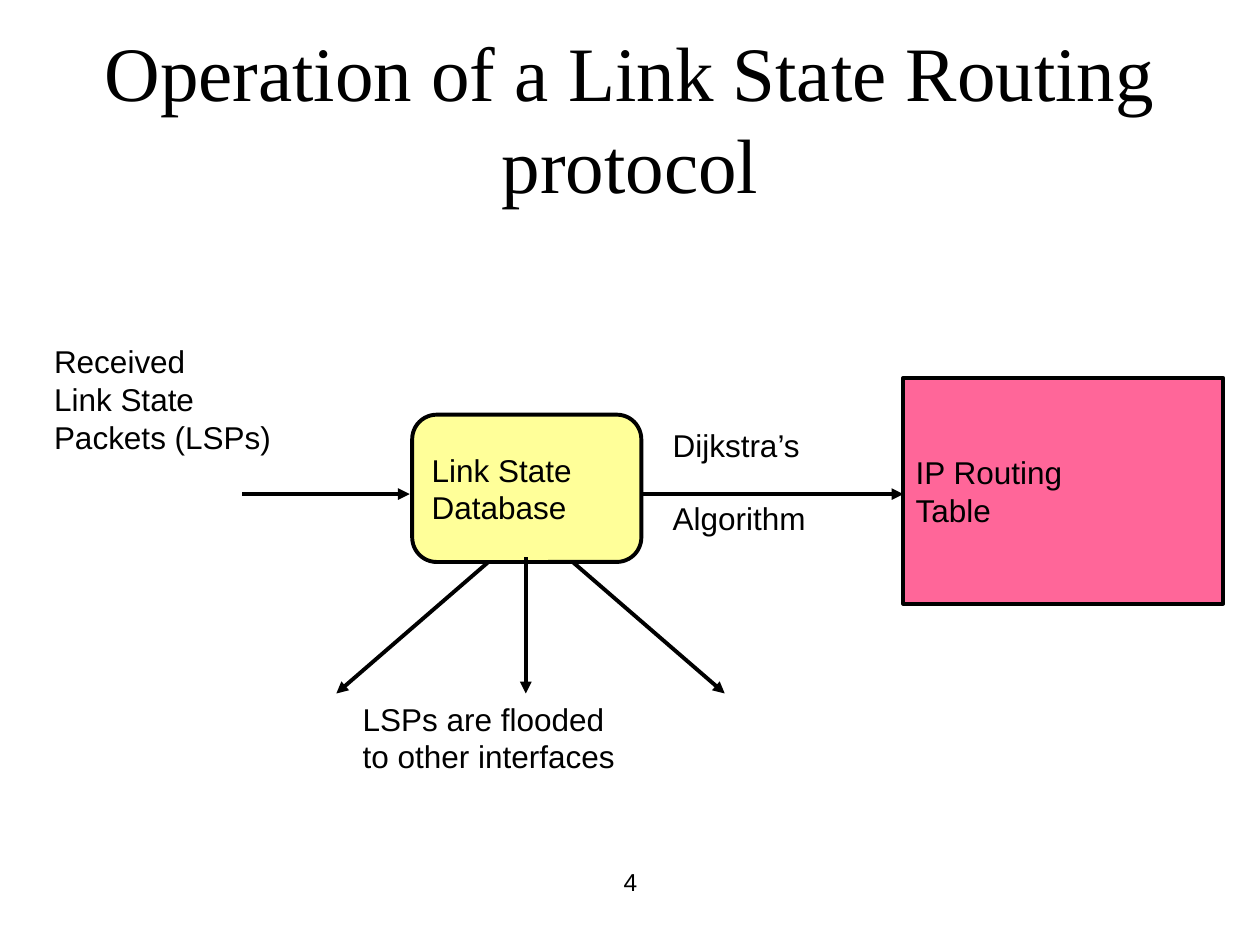
from lxml import etree
from pptx import Presentation
from pptx.dml.color import RGBColor
from pptx.enum import shapes, text
from pptx.oxml.ns import qn
from pptx.util import Cm, Pt

BLACK, YELLOW, PINK = "000000", "FFFF99", "FF6699"


def rgb(value):
    return RGBColor.from_string(value)


def write(tf, paragraphs, size=18, font="Arial", color=BLACK,
          align=text.PP_ALIGN.LEFT, anchor=text.MSO_ANCHOR.TOP,
          space=10, wrap=True):
    tf.word_wrap = wrap
    tf.auto_size = text.MSO_AUTO_SIZE.NONE
    tf.vertical_anchor = anchor
    for i, content in enumerate(paragraphs):
        p = tf.add_paragraph() if i else tf.paragraphs[0]
        p.text = content
        p.alignment = align
        p.space_before = p.space_after = Pt(space)
        for r in p.runs:
            r.font.size, r.font.name = Pt(size), font
            r.font.color.rgb = rgb(color)


def add_label(slide, x, y, w, h, paragraphs, **style):
    sp = slide.shapes.add_textbox(Cm(x), Cm(y), Cm(w), Cm(h))
    write(sp.text_frame, paragraphs, **style)


def add_node(slide, kind, x, y, w, h, fill, label):
    sp = slide.shapes.add_shape(kind, Cm(x), Cm(y), Cm(w), Cm(h))
    sp.shadow.inherit = False
    sp.fill.solid()
    sp.fill.fore_color.rgb = rgb(fill)
    sp.line.color.rgb = rgb(BLACK)
    sp.line.width = Pt(2.25)
    write(sp.text_frame, [label], anchor=text.MSO_ANCHOR.MIDDLE)


def add_arrow(slide, x1, y1, x2, y2):
    cxn = slide.shapes.add_connector(shapes.MSO_CONNECTOR.STRAIGHT,
                                     Cm(x1), Cm(y1), Cm(x2), Cm(y2))
    cxn.line.color.rgb = rgb(BLACK)
    cxn.line.width = Pt(2.25)
    etree.SubElement(cxn.line._get_or_add_ln(), qn("a:tailEnd"), type="triangle")
    etree.SubElement(cxn._element.spPr, qn("a:effectLst"))


def add_title(slide, x, y, w, h):
    sp = slide.shapes.title
    sp.left, sp.top, sp.width, sp.height = Cm(x), Cm(y), Cm(w), Cm(h)
    write(sp.text_frame, ["Operation of a Link State Routing protocol"],
          size=44, font="Times New Roman", align=text.PP_ALIGN.CENTER,
          anchor=text.MSO_ANCHOR.MIDDLE, space=0)


def add_routing_flow(slide, x, y):
    """Left-to-right flow: received packets, database, algorithm, routing table."""
    axis = y + 3.18
    add_arrow(slide, x + 4.04, axis, x + 7.42, axis)
    add_label(slide, x, y, 5.72, 2.54, ["Received\nLink State Packets (LSPs)"])
    add_node(slide, shapes.MSO_SHAPE.RECTANGLE, x + 17.37, y + 0.84, 6.45, 4.55,
             PINK, "IP Routing\nTable")
    add_arrow(slide, x + 12.07, axis, x + 17.37, axis)
    add_label(slide, x + 12.47, y + 1.68, 4.09, 3.35,
              ["Dijkstra’s", "Algorithm"], wrap=False)


def add_flooding(slide, x, y):
    """Database with three arrows fanning out below it."""
    start, end = y + 2.87, y + 5.62
    add_arrow(slide, x + 3.12, start, x + 6.3, end)
    add_arrow(slide, x + 1.65, start, x - 1.53, end)
    add_node(slide, shapes.MSO_SHAPE.ROUNDED_RECTANGLE, x, y, 4.62, 2.97,
             YELLOW, "Link State\nDatabase")
    add_arrow(slide, x + 2.29, start, x + 2.29, end)
    add_label(slide, x - 1.25, end, 5.64, 1.8,
              ["LSPs are flooded\nto other interfaces"], wrap=False)


def main():
    prs = Presentation()
    prs.slide_width, prs.slide_height = Cm(25.4), Cm(19.05)
    slide = prs.slides.add_slide(prs.slide_layouts.get_by_name("Title Only"))
    add_title(slide, 1.27, 0.76, 22.86, 3.18)
    add_routing_flow(slide, 0.84, 6.78)
    add_flooding(slide, 8.31, 8.36)
    add_label(slide, 8.69, 17.35, 8.04, 1.32, ["4"], size=14,
              align=text.PP_ALIGN.CENTER, space=0)
    prs.save("out.pptx")


if __name__ == "__main__":
    main()
